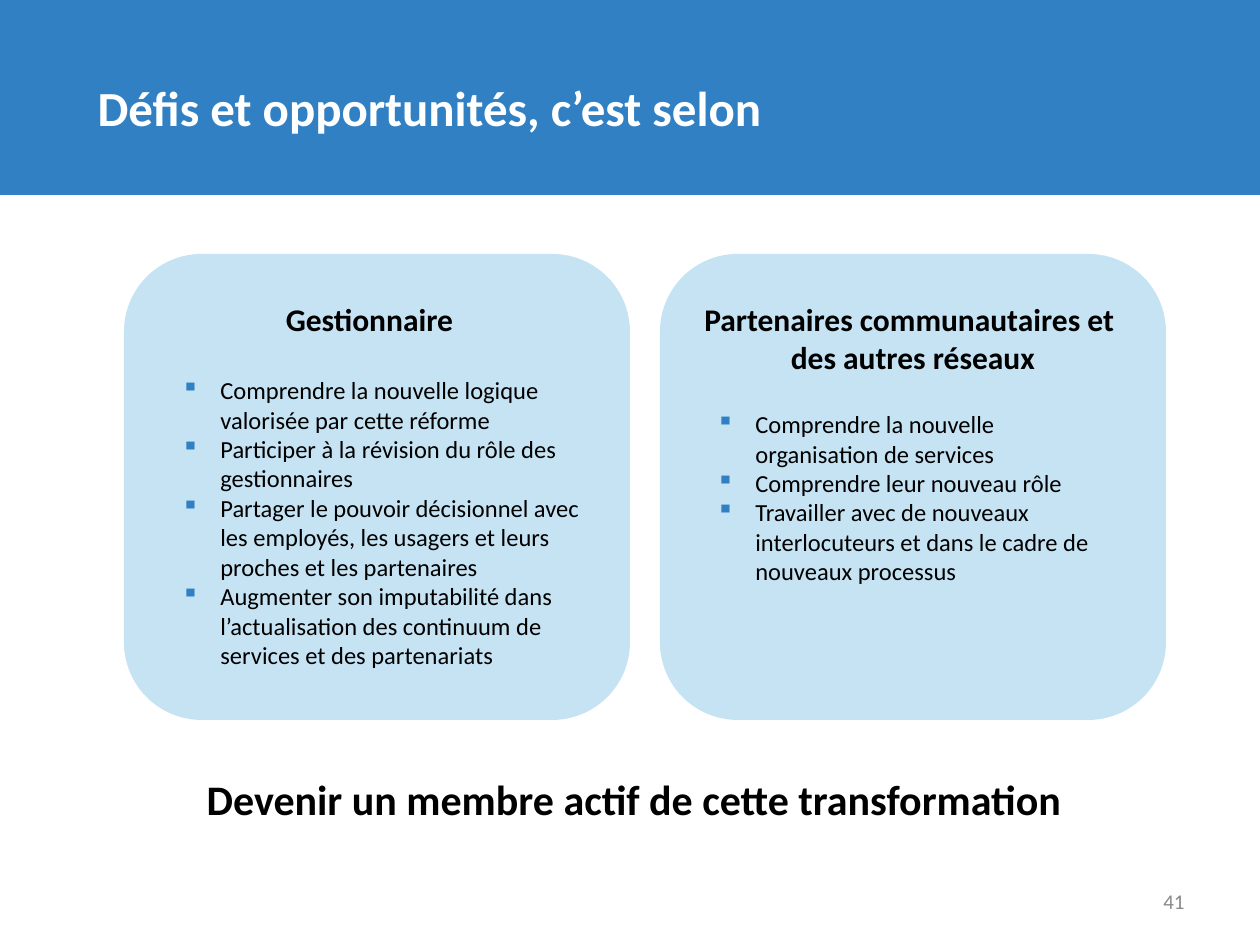
from lxml.etree import SubElement
from pptx import Presentation
from pptx.dml.color import RGBColor
from pptx.enum.shapes import MSO_SHAPE as SHAPE
from pptx.enum.text import MSO_ANCHOR as ANCHOR, MSO_AUTO_SIZE as AUTO, PP_ALIGN as ALIGN
from pptx.oxml.ns import qn
from pptx.util import Pt

PX = 914400 / 126
COLORS = {"blue": "3080C3", "card": "C6E3F3", "white": "FFFFFF",
          "black": "000000", "grey": "898989"}
FONT = "Calibri"
INDENT = 39


def emu(*lengths):
    return [round(n * PX) for n in lengths]


def rgb(name):
    return RGBColor.from_string(COLORS[name])


class Deck:
    def __init__(self, width, height):
        self.prs = Presentation()
        self.prs.slide_width, self.prs.slide_height = emu(width, height)

    def add_slide(self):
        self.s = self.prs.slides.add_slide(self.prs.slide_layouts[5])

    def shape(self, kind, box, color):
        sp = self.s.shapes.add_shape(kind, *emu(*box))
        sp.shadow.inherit = False
        sp.fill.solid()
        sp.fill.fore_color.rgb = rgb(color)
        sp.line.fill.background()
        return sp

    def fill_text(self, tf, lines, size, color="black", bold=False,
                  align=ALIGN.LEFT, anchor=ANCHOR.TOP, bullets=False):
        tf.word_wrap = True
        tf.auto_size = AUTO.NONE
        tf.vertical_anchor = anchor
        for i, line in enumerate(lines):
            p = tf.add_paragraph() if i else tf.paragraphs[0]
            p.alignment = align
            if bullets:
                self.bullet(p)
            r = p.add_run()
            r.text = line
            r.font.name, r.font.size, r.font.bold = FONT, Pt(size), bold
            r.font.color.rgb = rgb(color)

    def bullet(self, p):
        pPr = p._p.get_or_add_pPr()
        indent = emu(INDENT)[0]
        pPr.set("marL", str(indent))
        pPr.set("indent", str(-indent))
        clr = SubElement(pPr, qn("a:buClr"))
        SubElement(clr, qn("a:srgbClr")).set("val", COLORS["blue"])
        SubElement(pPr, qn("a:buChar")).set("char", "▪")

    def text(self, box, lines, size, **style):
        sp = self.s.shapes.add_textbox(*emu(*box))
        self.fill_text(sp.text_frame, lines, size, **style)

    def title(self, box, text, size, spacing):
        sp = self.s.shapes.title
        sp.left, sp.top, sp.width, sp.height = emu(*box)
        self.fill_text(sp.text_frame, [text], size, color="white", bold=True,
                       anchor=ANCHOR.MIDDLE)
        sp.text_frame.paragraphs[0].line_spacing = Pt(spacing)
        return sp

    def card(self, left, heading, heading_box, points, points_box):
        self.shape(SHAPE.ROUNDED_RECTANGLE, (left, 254, 506, 466), "card")
        self.text(heading_box, heading, 18, bold=True, align=ALIGN.CENTER)
        self.text(points_box, points, 14, bullets=True)


def main():
    deck = Deck(1260, 945)
    deck.add_slide()

    # Header band, placed behind the title
    band = deck.shape(SHAPE.RECTANGLE, (0, 0, 1260, 195), "blue")
    title = deck.title((85, 53, 1042, 90), "Défis et opportunités, c’est selon", 28, 44)
    title.element.addprevious(band.element)

    # Two cards
    deck.card(124, ["Gestionnaire "], (155, 294, 436, 50), [
        "Comprendre la nouvelle logique valorisée par cette réforme",
        "Participer à la révision du rôle des gestionnaires",
        "Partager le pouvoir décisionnel avec les employés, les usagers "
        "et leurs proches et les partenaires",
        "Augmenter son imputabilité dans l’actualisation des continuum "
        "de services et des partenariats",
    ], (169, 369, 444, 310))
    deck.card(660, ["Partenaires communautaires et ", "des autres réseaux"],
              (660, 294, 506, 89), [
        "Comprendre la nouvelle organisation de services",
        "Comprendre leur nouveau rôle",
        "Travailler avec de nouveaux interlocuteurs et dans le cadre "
        "de nouveaux processus",
    ], (704, 403, 417, 190))

    # Conclusion and page number
    deck.text((169, 767, 930, 63), ["Devenir un membre actif de cette transformation"],
              24, bold=True, align=ALIGN.CENTER)
    deck.text((903, 876, 294, 50), ["41"], 12, color="grey",
              align=ALIGN.RIGHT, anchor=ANCHOR.MIDDLE)

    deck.prs.save("out.pptx")


if __name__ == "__main__":
    main()
